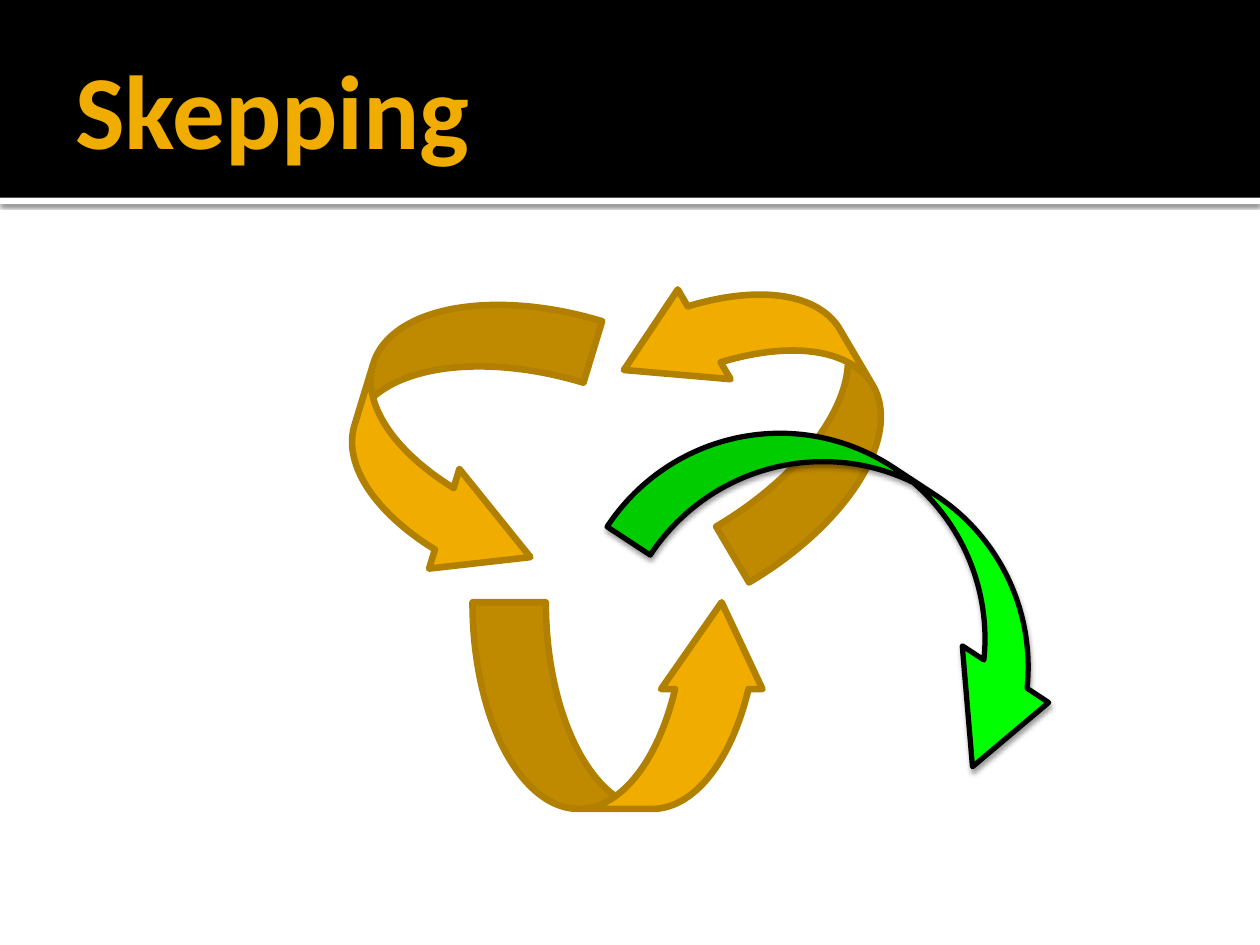
from lxml import etree
from pptx import Presentation
from pptx import util as u
from pptx.dml.color import RGBColor
from pptx.enum import shapes, text
from pptx.oxml.ns import qn

BLACK = RGBColor(0x00, 0x00, 0x00)
WHITE = RGBColor(0xFF, 0xFF, 0xFF)
GOLD = RGBColor(0xF0, 0xAD, 0x00)
DARK_GOLD = RGBColor(0xB2, 0x80, 0x00)
GREEN = RGBColor(0x00, 0xFF, 0x00)


class Page:
    font = "Calibri"

    def __init__(self, deck):
        self.slide = deck.slides.add_slide(deck.slide_layouts[6])

    def shape(self, kind, place, fill):
        shape = self.slide.shapes.add_shape(kind, *map(u.Inches, place))
        shape.shadow.inherit = False
        shape.fill.solid()
        shape.fill.fore_color.rgb = fill
        return shape

    def bar(self, place, fill):
        bar = self.shape(shapes.MSO_SHAPE.RECTANGLE, place, fill)
        bar.line.fill.background()
        return bar

    def arrow(self, place, angle, adjust, fill, line, width, flips=()):
        arrow = self.shape(shapes.MSO_SHAPE.CURVED_RIGHT_ARROW, place, fill)
        arrow.line.color.rgb = line
        arrow.line.width = u.Pt(width)
        arrow.rotation = angle
        for index, value in enumerate(adjust):
            arrow.adjustments[index] = value
        for flip in flips:
            arrow.element.spPr.xfrm.set(flip, "1")
        return arrow

    def shadow(self, shape, opacity, blur, distance):
        """Cast a black shadow straight down; blur and distance in points."""
        effects = shape.element.spPr.find(qn("a:effectLst"))
        outer = etree.SubElement(
            effects, qn("a:outerShdw"), blurRad=str(u.Pt(blur)),
            dist=str(u.Pt(distance)), dir="5400000", rotWithShape="0")
        color = etree.SubElement(outer, qn("a:srgbClr"), val=str(BLACK))
        etree.SubElement(color, qn("a:alpha"), val=str(opacity * 1000))

    def title(self, words, place, size, color):
        box = self.slide.shapes.add_textbox(*map(u.Inches, place))
        frame = box.text_frame
        frame.word_wrap = True
        frame.vertical_anchor = text.MSO_ANCHOR.MIDDLE
        frame.margin_left = u.Inches(0.1)
        frame.margin_right = u.Inches(0.05)
        frame.text = words
        font = frame.paragraphs[0].runs[0].font
        font.name, font.size, font.bold = self.font, u.Pt(size), True
        font.color.rgb = color


def main():
    deck = Presentation()
    deck.slide_width, deck.slide_height = u.Inches(10), u.Inches(7.5)
    page = Page(deck)

    # Header band and title
    rule = page.bar((0, 1.57, 10, 0.05), WHITE)
    page.shadow(rule, opacity=60, blur=2.5, distance=0.8)
    page.bar((0, 0, 10, 1.57), BLACK)
    page.title("Skepping", (0.5, 0.17, 9, 1.37), 60, GOLD)

    # Cycle of three gold arrows
    cycle = [
        ((2.83, 2.26, 1.64, 2.37), 16.9, (0.311, 0.504, 0.453), ()),
        ((5.23, 2, 1.64, 2.37), 329.5, (0.314, 0.504, 0.422), ("flipH", "flipV")),
        ((4.12, 4.41, 1.64, 2.38), 270, (0.355, 0.491, 0.42), ()),
    ]
    for place, angle, adjust, flips in cycle:
        page.arrow(place, angle, adjust, GOLD, DARK_GOLD, 3.78, flips)

    # Green arrow leaving the cycle
    way_out = page.arrow((6.07, 2.62, 1.64, 3.88), 123.3, (0.25, 0.5, 0.462),
                         GREEN, BLACK, 3, ("flipV",))
    page.shadow(way_out, opacity=38, blur=3.1, distance=2)

    deck.save("out.pptx")


if __name__ == "__main__":
    main()
